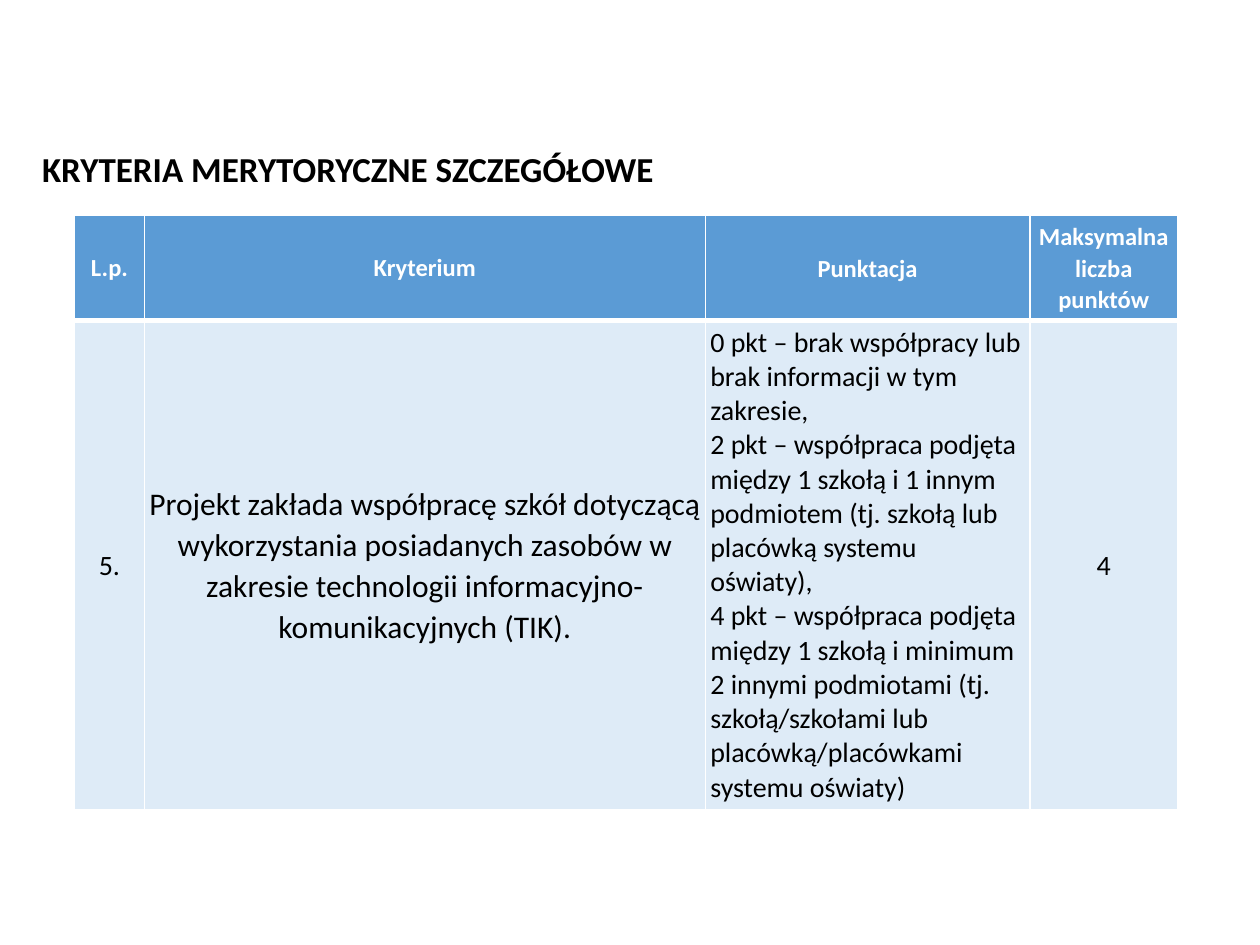
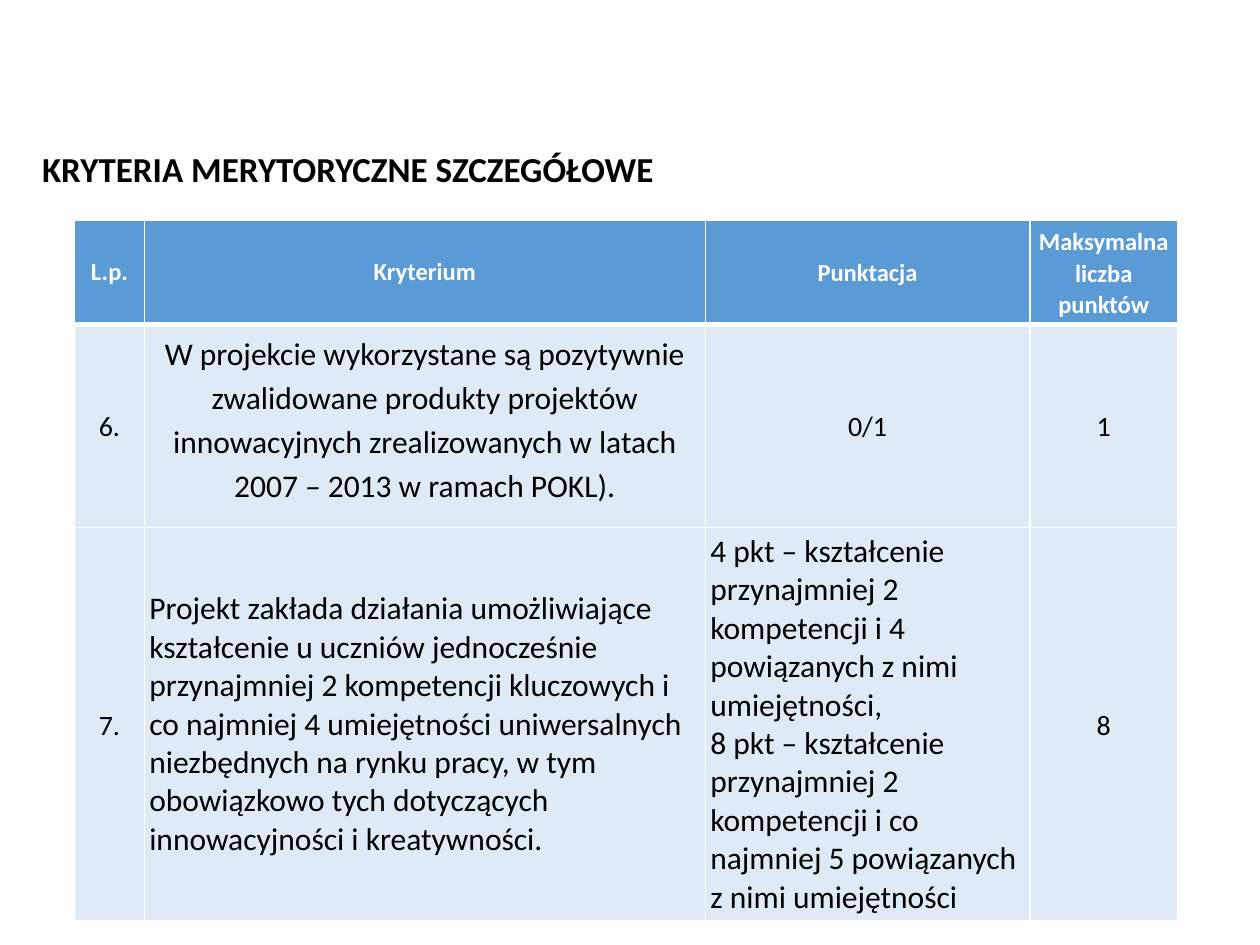
from dataclasses import dataclass

from lxml import etree
from pptx import Presentation
from pptx.dml.color import RGBColor
from pptx.enum.text import MSO_ANCHOR, PP_ALIGN
from pptx.oxml.ns import qn
from pptx.util import Cm, Pt

LEFT, CENTER = PP_ALIGN.LEFT, PP_ALIGN.CENTER
TOP, MIDDLE = MSO_ANCHOR.TOP, MSO_ANCHOR.MIDDLE


@dataclass(frozen=True)
class Theme:
    font: str = "Calibri"
    text: str = "000000"
    light: str = "FFFFFF"
    header: str = "5B9BD5"
    body: str = "DEEBF7"
    title_size: int = 20
    header_size: int = 14
    body_size: int = 16
    large_size: int = 18
    thin: int = 1
    thick: int = 3
    spacing: float = 1.07
    loose: float = 1.15


THEME = Theme()


@dataclass
class CellText:
    text: str
    size: int = THEME.body_size
    align: int = CENTER
    spacing: float = THEME.spacing
    anchor: int = MIDDLE
    wide_margin: bool = False


def large(text, **style):
    return CellText(text, THEME.large_size, **style)


def number(text):
    return CellText(text, wide_margin=True)


TITLE = "KRYTERIA MERYTORYCZNE SZCZEGÓŁOWE"
HEADER = [
    CellText("L.p.", THEME.header_size, spacing=1.0, wide_margin=True),
    CellText("Kryterium", THEME.header_size, spacing=1.0, wide_margin=True),
    CellText("Punktacja", THEME.header_size),
    CellText("Maksymalna liczba punktów", THEME.header_size),
]
SLIDES = [
    {
        "top": 4.33,
        "heights": [2.11, 9.83],
        "rows": [[
            number("5."),
            large("Projekt zakłada współpracę szkół dotyczącą wykorzystania "
                  "posiadanych zasobów w zakresie technologii "
                  "informacyjno-komunikacyjnych (TIK)."),
            CellText("0 pkt – brak współpracy lub brak informacji w tym zakresie,\n"
                     "2 pkt – współpraca podjęta między 1 szkołą i 1 innym "
                     "podmiotem (tj. szkołą lub placówką systemu oświaty),\n"
                     "4 pkt – współpraca podjęta między 1 szkołą i minimum "
                     "2 innymi podmiotami (tj. szkołą/szkołami lub "
                     "placówką/placówkami systemu oświaty)",
                     align=LEFT, spacing=1.0),
            CellText("4"),
        ]],
    },
    {
        "top": 4.43,
        "heights": [2.11, 4.09, 7.94],
        "rows": [
            [
                number("6."),
                large("W projekcie wykorzystane są pozytywnie zwalidowane "
                      "produkty projektów innowacyjnych zrealizowanych w latach "
                      "2007 – 2013 w ramach POKL).",
                      spacing=THEME.loose, anchor=TOP),
                CellText("0/1"),
                CellText("1"),
            ],
            [
                number("7."),
                large("Projekt zakłada działania umożliwiające kształcenie "
                      "u uczniów jednocześnie przynajmniej 2 kompetencji "
                      "kluczowych i co najmniej 4 umiejętności uniwersalnych "
                      "niezbędnych na rynku pracy, w tym obowiązkowo tych "
                      "dotyczących innowacyjności i kreatywności.",
                      align=LEFT, spacing=1.0),
                large("4 pkt – kształcenie przynajmniej 2 kompetencji "
                      "i 4 powiązanych z nimi umiejętności,\n"
                      "8 pkt – kształcenie przynajmniej 2 kompetencji i co "
                      "najmniej 5 powiązanych z nimi umiejętności",
                      align=LEFT, spacing=1.0),
                CellText("8"),
            ],
        ],
    },
]

TABLE_LEFT = 1.5
COLUMNS = [1.41, 11.31, 6.54, 2.98]


def format_runs(p, size, color, bold):
    for r in p.runs:
        r.font.name = THEME.font
        r.font.size = Pt(size)
        r.font.bold = bold
        r.font.color.rgb = RGBColor.from_string(color)


def add_borders(cell, top, bottom):
    tc_pr = cell._tc.get_or_add_tcPr()
    widths = {"a:lnL": THEME.thin, "a:lnR": THEME.thin, "a:lnT": top, "a:lnB": bottom}
    for tag, width in widths.items():
        ln = etree.SubElement(tc_pr, qn(tag), w=str(Pt(width)))
        fill = etree.SubElement(ln, qn("a:solidFill"))
        etree.SubElement(fill, qn("a:srgbClr"), val=THEME.light)


def fill_cell(cell, content, row):
    is_header = row == 0
    add_borders(cell,
                THEME.thick if row == 1 else THEME.thin,
                THEME.thick if is_header else THEME.thin)
    cell.fill.solid()
    cell.fill.fore_color.rgb = RGBColor.from_string(
        THEME.header if is_header else THEME.body)
    cell.vertical_anchor = content.anchor
    if not content.wide_margin:
        cell.margin_left = cell.margin_right = Cm(0.1)
        cell.margin_top = cell.margin_bottom = Cm(0.1)
    cell.text_frame.text = content.text
    for p in cell.text_frame.paragraphs:
        p.alignment = content.align
        p.line_spacing = content.spacing
        format_runs(p, content.size, THEME.light if is_header else THEME.text, is_header)


def add_title(slide):
    tf = slide.shapes.add_textbox(Cm(0.6), Cm(2.84), Cm(23.14), Cm(1.11)).text_frame
    tf.word_wrap = True
    tf.vertical_anchor = MIDDLE
    tf.text = TITLE
    format_runs(tf.paragraphs[0], THEME.title_size, THEME.text, True)


def add_criteria(slide, top, heights, rows):
    rows = [HEADER, *rows]
    table = slide.shapes.add_table(
        len(rows), len(COLUMNS), Cm(TABLE_LEFT), Cm(top),
        Cm(sum(COLUMNS)), Cm(sum(heights))).table
    table.horz_banding = False
    for column, width in zip(table.columns, COLUMNS):
        column.width = Cm(width)
    for i, (height, contents) in enumerate(zip(heights, rows)):
        table.rows[i].height = Cm(height)
        for j, content in enumerate(contents):
            fill_cell(table.cell(i, j), content, i)


def main():
    prs = Presentation()
    prs.slide_width, prs.slide_height = Cm(25.4), Cm(19.05)
    for data in SLIDES:
        slide = prs.slides.add_slide(prs.slide_layouts[6])
        add_criteria(slide, **data)
        add_title(slide)
    prs.save("out.pptx")


if __name__ == "__main__":
    main()
